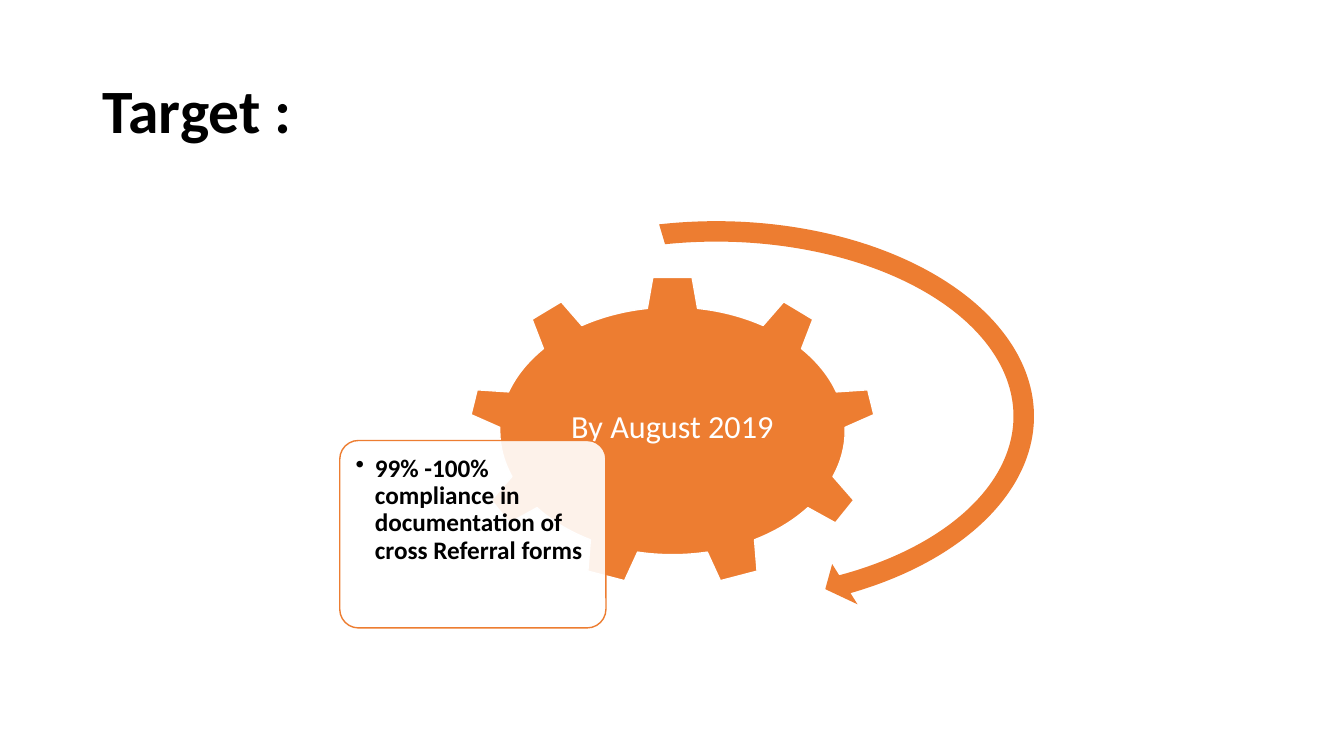
from lxml import etree
from pptx import Presentation
from pptx.dml.color import RGBColor
from pptx.enum import shapes, text
from pptx.oxml import ns
from pptx.util import Inches, Pt

# Content: wording, box (left, top, width, height), inset
TITLE = ("Target :", (0.92, 0.4, 11.5, 1.45), (0.1, 0.05))
DATE = ("By August 2019", (5.39, 3.46, 2.56, 1.58), (0.03, 0.03))
GOAL = ("99% -100% compliance in documentation of cross Referral forms",
        (3.43, 4.42, 2.53, 1.76), (0.1, 0.1))

GEAR = (4.65, 2.74, 4.04, 3.07)
CARD = (3.37, 4.37, 2.64, 1.86)
ARROW = (3.82, 2.06, 6.57, 4.14)
SWEEP = (0.049, 3.126, 31.55, 152.047, 0.057)

THEME = {
    "font": "Calibri", "ink": "000000", "paper": "FFFFFF", "accent": "ED7D31",
    "title": 44, "date": 23, "goal": 18, "line": 1,
}


def tint(name):
    return RGBColor.from_string(THEME[name])


def draw(slide, kind, box, fill, line=None, adjust=()):
    shape = slide.shapes.add_shape(kind, *map(Inches, box))
    shape.shadow.inherit = False
    shape.fill.solid()
    shape.fill.fore_color.rgb = tint(fill)
    if line:
        shape.line.color.rgb = tint(line)
        shape.line.width = Pt(THEME["line"])
    else:
        shape.line.fill.background()
    for i, value in enumerate(adjust):
        shape.adjustments[i] = value
    return shape


def write(slide, item, size, color="ink", bold=False, middle=True, center=False):
    words, box, (side, edge) = item
    frame = slide.shapes.add_textbox(*map(Inches, box)).text_frame
    frame.word_wrap = True
    frame.margin_left = frame.margin_right = Inches(side)
    frame.margin_top = frame.margin_bottom = Inches(edge)
    anchor = text.MSO_ANCHOR
    frame.vertical_anchor = anchor.MIDDLE if middle else anchor.TOP
    para = frame.paragraphs[0]
    para.text = words
    para.line_spacing = 0.9
    para.alignment = text.PP_ALIGN.CENTER if center else text.PP_ALIGN.LEFT
    para.font.name = THEME["font"]
    para.font.size = Pt(THEME[size])
    para.font.bold = bold
    para.font.color.rgb = tint(color)
    return para


def fade(shape, percent):
    color = shape.fill._xPr.find(ns.qn("a:solidFill"))[0]
    etree.SubElement(color, ns.qn("a:alpha")).set("val", str(percent * 1000))


def bullet(para, indent):
    props = para._p.get_or_add_pPr()
    props.set("marL", str(Inches(indent)))
    props.set("indent", str(-Inches(indent)))
    mark = etree.Element(ns.qn("a:buChar"), char="•")
    props.find(ns.qn("a:lnSpc")).addnext(mark)


def main():
    deck = Presentation()
    deck.slide_width, deck.slide_height = Inches(13.33), Inches(7.5)
    slide = deck.slides.add_slide(deck.slide_layouts[6])
    kinds = shapes.MSO_SHAPE

    # Title
    write(slide, TITLE, "title", bold=True)

    # Gear with the date
    draw(slide, kinds.GEAR_9, GEAR, "accent", "paper")
    write(slide, DATE, "date", "paper", center=True)

    # Card with the goal
    card = draw(slide, kinds.ROUNDED_RECTANGLE, CARD, "paper", "accent", (0.1,))
    fade(card, 90)
    bullet(write(slide, GOAL, "goal", bold=True, middle=False), 0.19)

    # Arrow around the gear
    draw(slide, kinds.CIRCULAR_ARROW, ARROW, "accent", adjust=SWEEP)

    deck.save("out.pptx")


if __name__ == "__main__":
    main()
